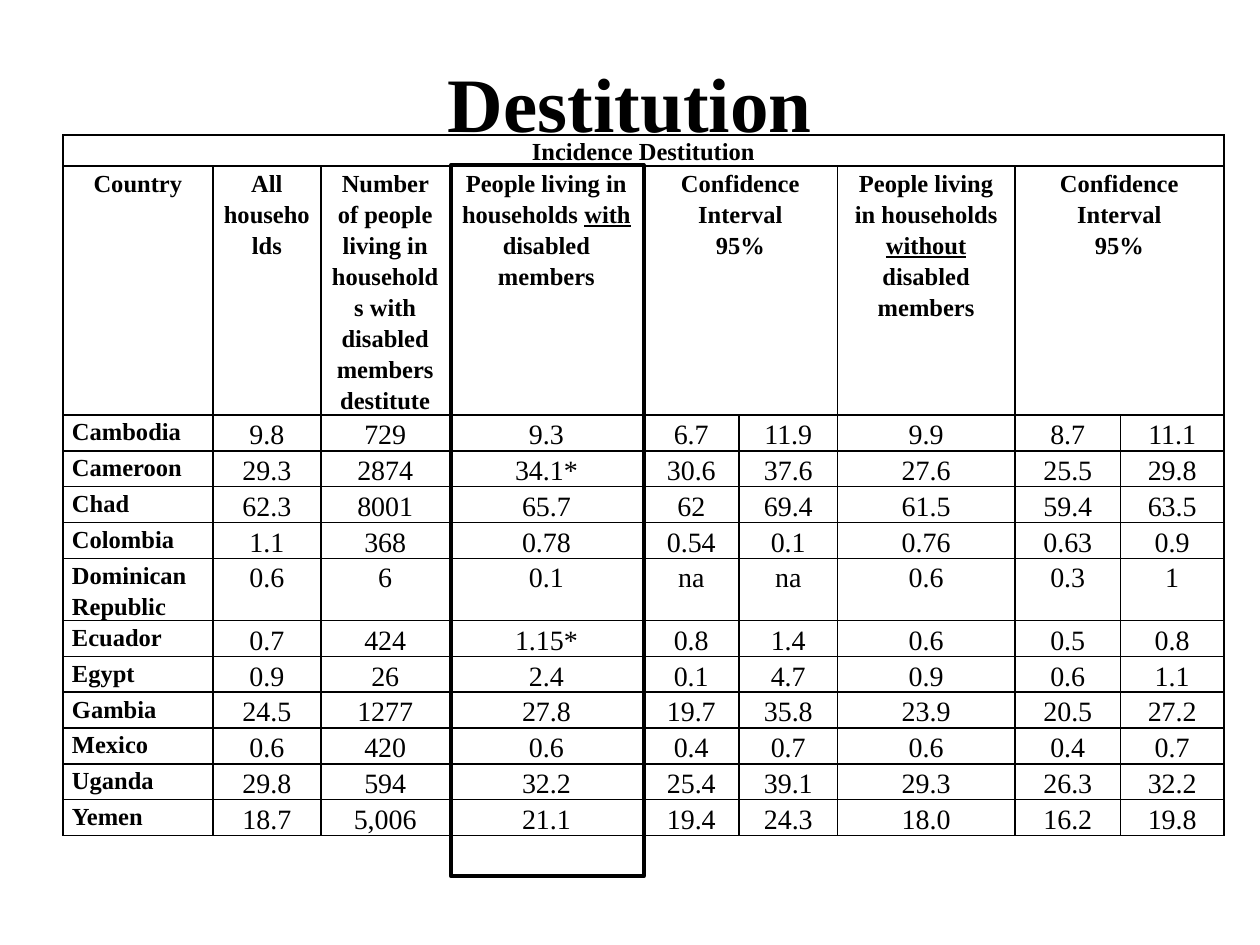
from lxml import etree
from pptx import Presentation
from pptx.dml.color import RGBColor
from pptx.enum.shapes import MSO_SHAPE
from pptx.enum.text import MSO_ANCHOR, PP_ALIGN
from pptx.oxml.ns import qn
from pptx.util import Cm, Pt

BLACK = RGBColor(0x00, 0x00, 0x00)
WHITE = RGBColor(0xFF, 0xFF, 0xFF)
CENTER, JUSTIFY = PP_ALIGN.CENTER, PP_ALIGN.JUSTIFY
TOP, MIDDLE = MSO_ANCHOR.TOP, MSO_ANCHOR.MIDDLE
RECTANGLE = MSO_SHAPE.RECTANGLE
TITLE_ONLY = 5

FONT = "Times New Roman"
HEADING = {"name": FONT, "size": Pt(14), "bold": True}
FIGURE = {"name": FONT, "size": Pt(16), "bold": False}
TITLE = {"name": FONT, "size": Pt(44), "bold": True}

COLUMN_WIDTHS = [3.02, 2.18, 2.59, 3.91, 1.93, 1.98, 3.58, 2.13, 2.08]
CAPTION_HEIGHT, HEADER_HEIGHT, ROW_HEIGHT, TALL_ROW_HEIGHT = 0.63, 5.0, 0.72, 1.25

CAPTION = "Incidence Destitution"
INTERVAL = "Confidence\nInterval\n95%"
# Column index: heading, with underlined words between underscores
HEADERS = {
    0: "Country",
    1: "All households",
    2: "Number of people living in households with disabled members destitute",
    3: "People living in households _with_ disabled members",
    4: INTERVAL,
    6: "People living in households _without_ disabled members",
    7: INTERVAL,
}
INTERVAL_COLUMNS = [4, 7]

COUNTRIES = [
    ("Cambodia", "9.8", "729", "9.3", "6.7", "11.9", "9.9", "8.7", "11.1"),
    ("Cameroon", "29.3", "2874", "34.1*", "30.6", "37.6", "27.6", "25.5", "29.8"),
    ("Chad", "62.3", "8001", "65.7", "62", "69.4", "61.5", "59.4", "63.5"),
    ("Colombia", "1.1", "368", "0.78", "0.54", "0.1", "0.76", "0.63", "0.9"),
    ("Dominican Republic", "0.6", "6", "0.1", "na", "na", "0.6", "0.3", "1"),
    ("Ecuador", "0.7", "424", "1.15*", "0.8", "1.4", "0.6", "0.5", "0.8"),
    ("Egypt", "0.9", "26", "2.4", "0.1", "4.7", "0.9", "0.6", "1.1"),
    ("Gambia", "24.5", "1277", "27.8", "19.7", "35.8", "23.9", "20.5", "27.2"),
    ("Mexico", "0.6", "420", "0.6", "0.4", "0.7", "0.6", "0.4", "0.7"),
    ("Uganda", "29.8", "594", "32.2", "25.4", "39.1", "29.3", "26.3", "32.2"),
    ("Yemen", "18.7", "5,006", "21.1", "19.4", "24.3", "18.0", "16.2", "19.8"),
]


def set_attributes(target, values):
    for name, value in values.items():
        setattr(target, name, value)


def format_font(font, values):
    set_attributes(font, values)
    font.color.rgb = BLACK


def add_title(page, text):
    title = page.shapes.title
    set_attributes(title, {"left": Cm(1.27), "top": Cm(0.76),
                           "width": Cm(22.86), "height": Cm(2.57)})
    title.text_frame.vertical_anchor = MIDDLE
    para = title.text_frame.paragraphs[0]
    para.alignment = CENTER
    span = para.add_run()
    span.text = text
    format_font(span.font, TITLE)


def write_cell(cell, text, font_values, alignment=CENTER):
    """Fill a cell; newlines part paragraphs, underscores enclose underlining."""
    frame = cell.text_frame
    for number, line in enumerate(text.split("\n")):
        para = frame.add_paragraph() if number else frame.paragraphs[0]
        set_attributes(para, {"alignment": alignment, "line_spacing": 1.15})
        for position, words in enumerate(line.split("_")):
            span = para.add_run()
            span.text = words
            format_font(span.font, font_values)
            if position % 2:
                span.font.underline = True


def style_cell(cell):
    set_attributes(cell, {"margin_left": Cm(0.18), "margin_right": Cm(0.18),
                          "margin_top": 0, "margin_bottom": 0,
                          "vertical_anchor": TOP})
    properties = cell._tc.get_or_add_tcPr()
    for side in ("a:lnL", "a:lnR", "a:lnT", "a:lnB"):
        border = etree.SubElement(properties, qn(side), w=str(Pt(1)))
        fill = etree.SubElement(border, qn("a:solidFill"))
        etree.SubElement(fill, qn("a:srgbClr"), val=str(BLACK))
    cell.fill.solid()
    cell.fill.fore_color.rgb = WHITE


def add_destitution_table(page):
    heights = [CAPTION_HEIGHT, HEADER_HEIGHT] + [
        TALL_ROW_HEIGHT if " " in country else ROW_HEIGHT
        for country, *_ in COUNTRIES]
    table = page.shapes.add_table(
        len(heights), len(COLUMN_WIDTHS), Cm(1.27), Cm(2.72),
        Cm(sum(COLUMN_WIDTHS)), Cm(sum(heights))).table
    set_attributes(table, {"first_row": False, "horz_banding": False})
    for column, width in zip(table.columns, COLUMN_WIDTHS):
        column.width = Cm(width)
    for row, height in zip(table.rows, heights):
        row.height = Cm(height)
    for cell in table.iter_cells():
        style_cell(cell)

    table.cell(0, 0).merge(table.cell(0, len(COLUMN_WIDTHS) - 1))
    for column in INTERVAL_COLUMNS:
        table.cell(1, column).merge(table.cell(1, column + 1))

    write_cell(table.cell(0, 0), CAPTION, HEADING)
    for column, text in HEADERS.items():
        write_cell(table.cell(1, column), text, HEADING)
    for row, (country, *figures) in enumerate(COUNTRIES, start=2):
        write_cell(table.cell(row, 0), country, HEADING, JUSTIFY)
        for column, figure in enumerate(figures, start=1):
            write_cell(table.cell(row, column), figure, FIGURE)


def add_column_frame(page):
    frame = page.shapes.add_shape(RECTANGLE, Cm(9.09), Cm(3.33), Cm(3.89), Cm(14.33))
    frame.shadow.inherit = False
    frame.fill.background()
    frame.line.color.rgb = BLACK
    frame.line.width = Pt(2.25)


def main():
    deck = Presentation()
    deck.slide_width, deck.slide_height = Cm(25.4), Cm(19.05)
    page = deck.slides.add_slide(deck.slide_layouts[TITLE_ONLY])
    add_title(page, "Destitution")
    add_destitution_table(page)
    add_column_frame(page)
    deck.save("out.pptx")


if __name__ == "__main__":
    main()
